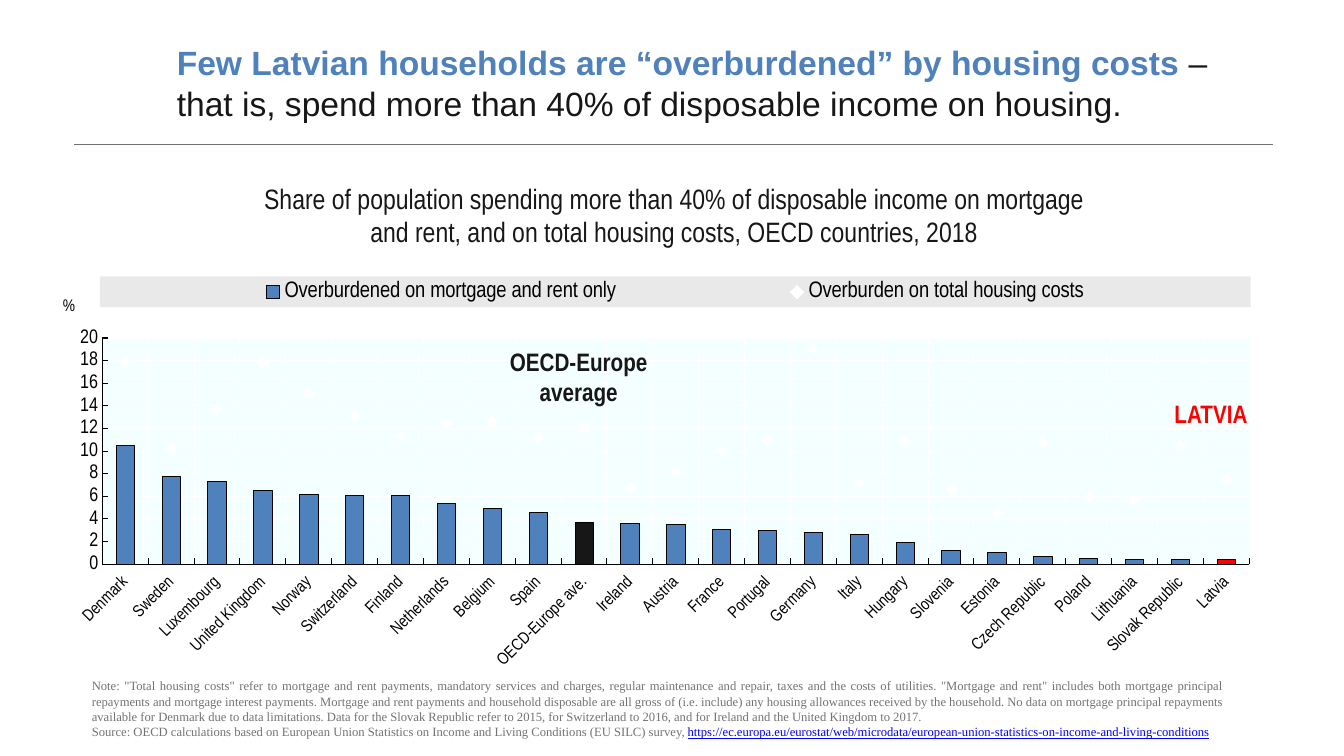
from dataclasses import dataclass
from lxml import etree
from pptx import Presentation
from pptx.chart.data import CategoryChartData as Data
from pptx.dml.color import RGBColor as Color
from pptx.enum.chart import (XL_CHART_TYPE as Kind, XL_LEGEND_POSITION as Side,
                             XL_MARKER_STYLE as Mark, XL_TICK_LABEL_POSITION as Label,
                             XL_TICK_MARK as Tick)
from pptx.enum.text import MSO_ANCHOR as Anchor, PP_ALIGN as Align
from pptx.oxml import parse_xml as read
from pptx.oxml.ns import nsdecls as spaces, qn
from pptx.util import Pt


@dataclass(frozen=True)
class Theme:
    blue: str = "4F81BD"
    dark: str = "171717"
    gray: str = "727272"
    red: str = "FF0000"
    link: str = "0000FF"
    black: str = "000000"
    white: str = "FFFFFF"
    band: str = "E9E9E9"
    pale: str = "F4FFFF"
    sans: str = "Arial"
    slim: str = "Arial Narrow"
    serif: str = "Times New Roman"
    head: int = 24
    sub: int = 20
    tag: int = 18
    key: int = 16
    scale: int = 14
    name: int = 12
    note: int = 9


def apply(thing, **vals):
    for key, val in vals.items():
        setattr(thing, key, val)


def style(font, face, size, tint, **more):
    apply(font, name=face, size=Pt(size), **more)
    font.color.rgb = Color.from_string(tint)


def paint(fill, tint):
    fill.solid()
    fill.fore_color.rgb = Color.from_string(tint)


def stroke(line, tint, width):
    line.width = Pt(width)
    paint(line.fill, tint)


def place(node, index, inner=False, **spots):
    """Give a chart part a fixed place, in shares of the chart."""
    for old in node.findall(qn("c:layout")):
        node.remove(old)
    rows = '<c:layoutTarget val="inner"/>' if inner else ""
    rows += "".join(f'<c:{k}Mode val="edge"/>' for k in spots if k in "xy")
    rows += "".join(f'<c:{k} val="{v}"/>' for k, v in spots.items())
    node.insert(index, read(f'<c:layout {spaces("c")}><c:manualLayout>{rows}'
                            '</c:manualLayout></c:layout>'))


def flood(tint):
    return read(f'<c:spPr {spaces("c", "a")}><a:solidFill><a:srgbClr val="{tint}"/>'
                '</a:solidFill><a:ln><a:noFill/></a:ln></c:spPr>')


class Board:
    def __init__(self, slide, theme):
        self.slide, self.theme = slide, theme

    def text(self, area, paras, face, size, side=7.2, anchor=Anchor.TOP, **form):
        frame = self.slide.shapes.add_textbox(*map(Pt, area)).text_frame
        apply(frame, word_wrap=True, vertical_anchor=anchor,
              margin_left=Pt(side), margin_right=Pt(side))
        for i, runs in enumerate(paras):
            para = frame.add_paragraph() if i else frame.paragraphs[0]
            apply(para, **form)
            for words, tint, more in runs:
                run = para.add_run()
                run.text = words
                style(run.font, face, size, tint, **more)

    def rule(self, left, right, top):
        line = self.slide.shapes.add_connector(1, *map(Pt, (left, top, right, top)))
        stroke(line.line, self.theme.gray, 0.5)
        etree.SubElement(line._element.spPr, qn("a:effectLst"))

    def axis(self, axis, size):
        th = self.theme
        apply(axis, has_major_gridlines=True, major_tick_mark=Tick.INSIDE,
              minor_tick_mark=Tick.NONE)
        stroke(axis.format.line, th.black, 0.75)
        stroke(axis.major_gridlines.format.line, th.white, 0.75)
        style(axis.tick_labels.font, th.slim, size, th.black)

    def chart(self, area, rows, names, tints):
        th = self.theme
        data = Data()
        data.categories = [row[0] for row in rows]
        for i, name in enumerate(names, 1):
            data.add_series(name, [row[i] for row in rows])
        chart = self.slide.shapes.add_chart(
            Kind.COLUMN_STACKED, *map(Pt, area), data).chart
        chart.has_title = False
        style(chart.font, th.slim, 8, th.black)

        # Columns, with the marked countries in their own colour
        plot = chart.plots[0]
        apply(plot, gap_width=150, overlap=100, vary_by_categories=False)
        bars = plot.series[0]
        for i, row in enumerate(rows):
            if row[0] in tints:
                form = bars.points[i].format
                paint(form.fill, tints[row[0]])
                stroke(form.line, th.black, 0.5)
        paint(bars.format.fill, th.blue)
        stroke(bars.format.line, th.black, 0.5)

        # Second series becomes a line plot on the same axes
        stack = chart.element.find(".//" + qn("c:barChart"))
        ser = stack.findall(qn("c:ser"))[1]
        for node in ser.findall(qn("c:invertIfNegative")):
            ser.remove(node)
        line = read(f'<c:lineChart {spaces("c")}><c:grouping val="standard"/>'
                    '<c:varyColors val="0"/><c:marker val="1"/></c:lineChart>')
        line.insert(2, ser)
        for node in stack.findall(qn("c:axId")):
            etree.SubElement(line, qn("c:axId")).set("val", node.get("val"))
        stack.addnext(line)
        dots = chart.plots[1].series[0]
        dots.smooth = False
        dots.format.line.fill.background()
        apply(dots.marker, style=Mark.DIAMOND, size=8)
        paint(dots.marker.format.fill, th.white)
        dots.marker.format.line.fill.background()

        # Axes
        base, scale = chart.category_axis, chart.value_axis
        self.axis(base, th.name)
        self.axis(scale, th.scale)
        base.tick_label_position = Label.LOW
        turn = chart.element.find(".//" + qn("c:catAx")).find(".//" + qn("a:bodyPr"))
        turn.set("rot", "-2700000")
        apply(scale, minimum_scale=0, maximum_scale=20, major_unit=2, has_title=True)
        apply(scale.tick_labels, number_format="General", number_format_is_linked=False)
        frame = scale.axis_title.text_frame
        frame.text = "%"
        style(frame.paragraphs[0].runs[0].font, th.slim, th.name, th.black, bold=False)
        title = chart.element.find(".//" + qn("c:valAx")).find(qn("c:title"))
        title.find(".//" + qn("a:bodyPr")).set("rot", "0")
        place(title, 1, x=0.008, y=0.063)

        # Legend band and plot area
        chart.has_legend = True
        apply(chart.legend, position=Side.TOP, include_in_layout=True)
        style(chart.legend.font, th.slim, th.key, th.black)
        key = chart.element.find(".//" + qn("c:legend"))
        place(key, 1, x=0.041, y=0.02, w=0.948, h=0.075)
        key.find(qn("c:overlay")).addnext(flood(th.band))
        ground = stack.getparent()
        place(ground, 0, inner=True, x=0.043, y=0.17, w=0.945, h=0.55)
        ground.append(flood(th.pale))


ROWS = [
    ("Denmark", 10.5, 17.9), ("Sweden", 7.8, 10.3), ("Luxembourg", 7.3, 13.7),
    ("United Kingdom", 6.5, 17.9), ("Norway", 6.2, 15.1), ("Switzerland", 6.1, 13.1),
    ("Finland", 6.1, 11.3), ("Netherlands", 5.4, 12.5), ("Belgium", 4.9, 12.6),
    ("Spain", 4.6, 11.2), ("OECD-Europe ave.", 3.7, 12), ("Ireland", 3.6, 6.8),
    ("Austria", 3.5, 8.1), ("France", 3.1, 10.1), ("Portugal", 3, 10.9),
    ("Germany", 2.8, 19.1), ("Italy", 2.6, 7.3), ("Hungary", 1.9, 10.9),
    ("Slovenia", 1.2, 6.6), ("Estonia", 1, 4.6), ("Czech Republic", 0.7, 10.8),
    ("Poland", 0.5, 6), ("Lithuania", 0.4, 5.7), ("Slovak Republic", 0.4, 10.5),
    ("Latvia", 0.4, 7.5),
]
NOTE = (
    'Note: "Total housing costs" refer to mortgage and rent payments, mandatory services '
    'and charges, regular maintenance and repair, taxes and the costs of utilities. '
    '"Mortgage and rent" includes both mortgage principal repayments and mortgage interest '
    'payments. Mortgage and rent payments and household disposable are all gross of (i.e. '
    'include) any housing allowances received by the household. No data on mortgage '
    'principal repayments available for Denmark due to data limitations. Data for the '
    'Slovak Republic refer to 2015, for Switzerland to 2016, and for Ireland and the '
    'United Kingdom to 2017.')
SOURCE = ("Source: OECD calculations based on European Union Statistics on Income and "
          "Living Conditions (EU SILC) survey, ")
LINK = ("https://ec.europa.eu/eurostat/web/microdata/"
        "european-union-statistics-on-income-and-living-conditions")


def main():
    deck, th = Presentation(), Theme()
    apply(deck, slide_width=Pt(960), slide_height=Pt(540))
    board = Board(deck.slides.add_slide(deck.slide_layouts[6]), th)
    bold = {"bold": True}

    # Heading
    board.rule(52.8, 909.2, 103)
    board.text((119.2, 18.7, 795, 80.6), [[
        ("Few Latvian households are “overburdened” by housing costs ", th.blue, bold),
        ("– that is, spend more than 40% of disposable income on housing.", th.dark, {})]],
        th.sans, th.head, anchor=Anchor.MIDDLE)

    # Chart and its title
    board.chart((35.8, 191.5, 867, 293.8), ROWS,
                ("Overburdened on mortgage and rent only", "Overburden on total housing costs"),
                {"OECD-Europe ave.": th.dark, "Latvia": th.red})
    board.text((143.8, 126, 675.4, 55.4), [[(
        "Share of population spending more than 40% of disposable income on mortgage and "
        "rent, and on total housing costs, OECD countries, 2018", th.dark, {})]],
        th.slim, th.sub, side=42.5, alignment=Align.CENTER)

    # Labels over the chart
    board.text((809.6, 281, 88.6, 28.8), [[("LATVIA", th.red, bold)]],
               th.slim, th.tag, alignment=Align.RIGHT)
    board.text((336.7, 243.8, 153.4, 51.1), [[("OECD-Europe average", th.dark, bold)]],
               th.slim, th.tag, alignment=Align.CENTER)

    # Note and source
    board.text((23.8, 481, 891.2, 51.1), [
        [(NOTE, th.gray, {})],
        [(SOURCE, th.gray, {}), (LINK, th.link, {"underline": True})]],
        th.serif, th.note, side=41.8, alignment=Align.JUSTIFY)
    deck.save("out.pptx")


if __name__ == "__main__":
    main()
